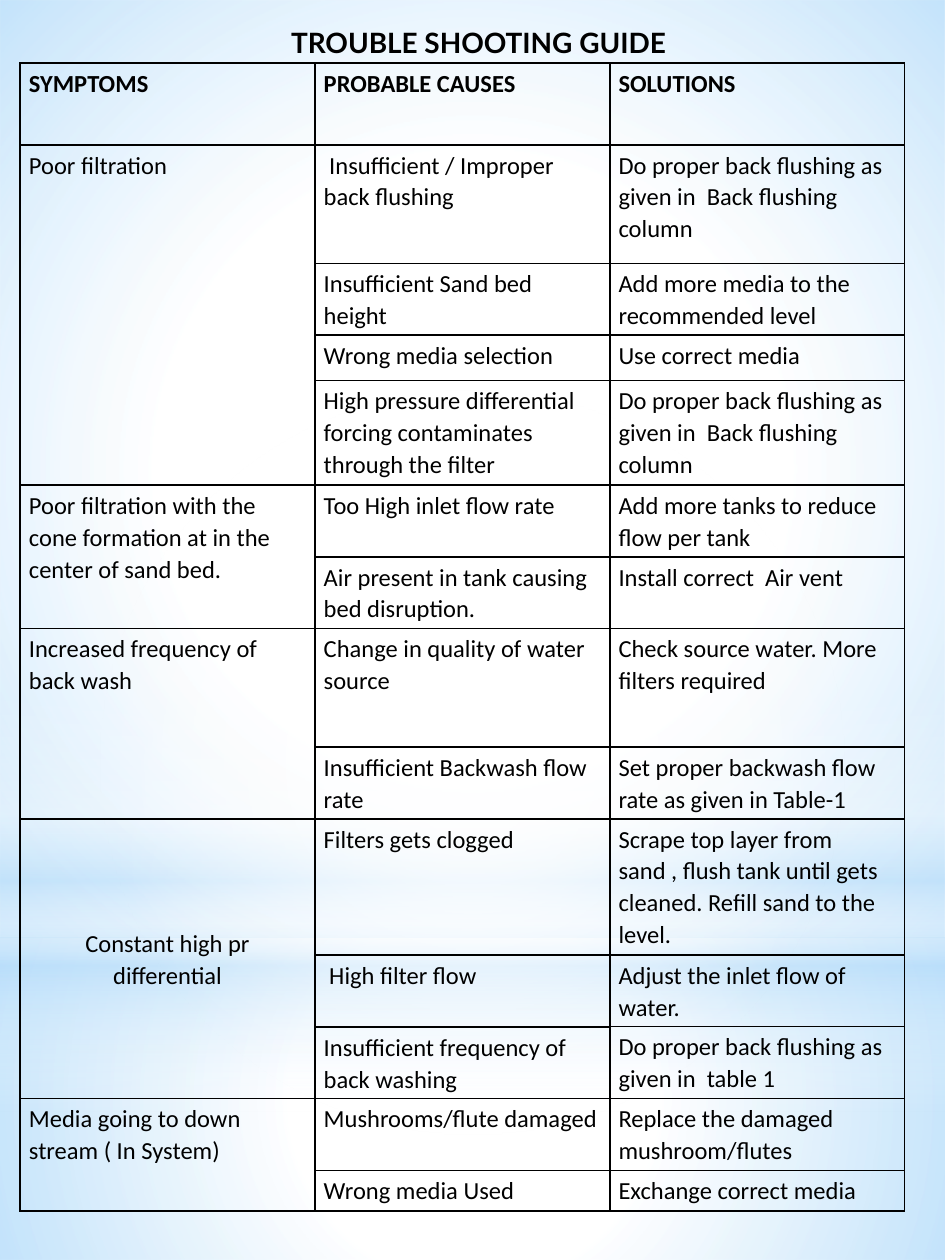
import lxml.etree
import pptx
import pptx.dml.color
import pptx.enum.shapes
import pptx.enum.text
import pptx.oxml.ns
import pptx.util

Inches = pptx.util.Inches
Points = pptx.util.Pt
Anchor = pptx.enum.text.MSO_ANCHOR
Align = pptx.enum.text.PP_ALIGN
Preset = pptx.enum.shapes.MSO_SHAPE
qn = pptx.oxml.ns.qn

BLACK = pptx.dml.color.RGBColor(0x00, 0x00, 0x00)
WHITE = pptx.dml.color.RGBColor(0xFF, 0xFF, 0xFF)
SKY = pptx.dml.color.RGBColor(0xB4, 0xDC, 0xFA)

COLUMN_WIDTH = 2.34
CENTERED = "Constant high pr differential"
BACK_FLUSH = "Do proper back flushing as given in  Back flushing column"

GUIDE = [
    (0.65, "SYMPTOMS", "PROBABLE CAUSES", "SOLUTIONS"),
    (0.94, "Poor filtration", " Insufficient / Improper  back flushing", BACK_FLUSH),
    (0, None, "Insufficient Sand bed height", None),
    (0.57, None, None, "Add more media to the recommended level"),
    (0.36, None, "Wrong media selection", "Use correct media"),
    (0.83, None, "High pressure differential forcing contaminates through the filter", BACK_FLUSH),
    (0.57, "Poor filtration with the cone formation at in the center of sand bed.",
     "Too High inlet flow rate", "Add more tanks to reduce flow per tank"),
    (0.57, None, "Air present in tank causing bed disruption.", "Install correct  Air vent"),
    (0.94, "Increased frequency of back wash", "Change in quality of water source",
     "Check source water. More filters required"),
    (0.57, None, "Insufficient Backwash flow rate",
     "Set proper backwash flow rate as given in Table-1"),
    (1.08, CENTERED, "Filters gets clogged",
     "Scrape top layer from sand , flush tank until gets cleaned. Refill sand to the level."),
    (0.57, None, " High filter flow", "Adjust the inlet flow of water."),
    (0, None, None, "Do proper back flushing as given in  table 1"),
    (0.57, None, "Insufficient frequency of back washing", None),
    (0.57, "Media going to down stream ( In System)", "Mushrooms/flute damaged",
     "Replace the damaged mushroom/flutes"),
    (0.32, None, "Wrong media Used", "Exchange correct media"),
]


class SlideBuilder:
    """Holds the style and the current slide, and adds each kind of element."""

    def __init__(self, slide):
        self.slide = slide
        self.font_name = "Calibri"
        self.font_size = 14
        self.border_width = 1

    def add_glow(self, preset, top, height, stops, angle=None):
        shape = self.slide.shapes.add_shape(
            preset, 0, Inches(top), Inches(7.5), Inches(height))
        shape.shadow.inherit = False
        shape.line.fill.background()
        shape.fill.background()
        properties = shape._element.spPr
        gradient = lxml.etree.Element(qn("a:gradFill"), rotWithShape="1")
        stop_list = lxml.etree.SubElement(gradient, qn("a:gsLst"))
        for position, color, opacity in stops:
            stop = lxml.etree.SubElement(stop_list, qn("a:gs"), pos=str(position * 1000))
            value = lxml.etree.SubElement(stop, qn("a:srgbClr"), val=str(color))
            lxml.etree.SubElement(value, qn("a:alpha"), val=str(opacity * 1000))
        if angle is None:
            direction = lxml.etree.SubElement(gradient, qn("a:path"), path="circle")
            lxml.etree.SubElement(direction, qn("a:fillToRect"),
                                  {side: "50000" for side in "ltrb"})
        else:
            lxml.etree.SubElement(gradient, qn("a:lin"), ang=str(angle * 60000), scaled="0")
        properties.replace(properties.find(qn("a:noFill")), gradient)

    def add_borders(self, cell):
        properties = cell._tc.get_or_add_tcPr()
        for index, side in enumerate(("lnL", "lnR", "lnT", "lnB")):
            line = lxml.etree.Element(qn("a:" + side), w=str(Points(self.border_width)))
            fill = lxml.etree.SubElement(line, qn("a:solidFill"))
            lxml.etree.SubElement(fill, qn("a:srgbClr"), val=str(BLACK))
            properties.insert(index, line)

    def write_cell(self, cell, text, bold):
        cell.text_frame.text = text
        paragraph = cell.text_frame.paragraphs[0]
        paragraph.line_spacing = 1.07
        paragraph.space_after = Points(8)
        if text == CENTERED:
            paragraph.alignment = Align.CENTER
            cell.vertical_anchor = Anchor.MIDDLE
        font = paragraph.runs[0].font
        font.name = self.font_name
        font.size = Points(self.font_size)
        font.bold = bold
        font.color.rgb = BLACK

    def add_guide(self, left, top, guide):
        heights, *columns = zip(*guide)
        table = self.slide.shapes.add_table(
            len(guide), len(columns), Inches(left), Inches(top),
            Inches(COLUMN_WIDTH * len(columns)), Inches(sum(heights))).table
        table.horz_banding = False
        for row, height in zip(table.rows, heights):
            row.height = Inches(height)
        for column_index, texts in enumerate(columns):
            table.columns[column_index].width = Inches(COLUMN_WIDTH)
            for row_index, text in enumerate(texts):
                cell = table.cell(row_index, column_index)
                cell.fill.background()
                cell.margin_left = cell.margin_right = Inches(0.07)
                cell.margin_top = cell.margin_bottom = Inches(0.03)
                self.add_borders(cell)
                if text is None:
                    continue
                self.write_cell(cell, text, row_index == 0)
                last = row_index
                while last + 1 < len(texts) and texts[last + 1] is None:
                    last += 1
                if last > row_index:
                    cell.merge(table.cell(last, column_index))

    def add_title(self, text):
        title = self.slide.shapes.title
        title.left, title.top = Inches(1.74), Inches(0)
        title.width, title.height = Inches(5.75), Inches(0.5)
        frame = title.text_frame
        frame.text = text
        frame.auto_size = pptx.enum.text.MSO_AUTO_SIZE.NONE
        frame.vertical_anchor = Anchor.BOTTOM
        frame.margin_left, frame.margin_right = Inches(0.57), Inches(0.1)
        frame.margin_top, frame.margin_bottom = Inches(0.05), Inches(0.03)
        paragraph = frame.paragraphs[0]
        paragraph.alignment = Align.LEFT
        font = paragraph.runs[0].font
        font.name = "Lato"
        font.size = Points(16)
        font.bold = True
        font.color.rgb = BLACK
        self.slide.shapes._spTree.append(title._element)


def main():
    presentation = pptx.Presentation()
    presentation.slide_width = Inches(7.5)
    presentation.slide_height = Inches(10)
    builder = SlideBuilder(presentation.slides.add_slide(presentation.slide_layouts[5]))
    builder.add_glow(Preset.RECTANGLE, 7.44, 2.56,
                     [(0, WHITE, 91), (37, WHITE, 76), (100, SKY, 79)])
    builder.add_glow(Preset.RECTANGLE, 0, 7.44,
                     [(0, WHITE, 89), (48, WHITE, 62), (100, SKY, 79)])
    builder.add_glow(Preset.RECTANGLE, 5.49, 3.33,
                     [(0, WHITE, 0), (29, WHITE, 30), (45, SKY, 40),
                      (55, WHITE, 26), (65, SKY, 60), (100, WHITE, 0)], angle=90)
    builder.add_glow(Preset.OVAL, 2.33, 7.44, [(0, WHITE, 100), (56, WHITE, 0)])
    builder.add_guide(0.16, 0.5, GUIDE)
    builder.add_title("TROUBLE SHOOTING GUIDE")
    presentation.save("out.pptx")


if __name__ == "__main__":
    main()
